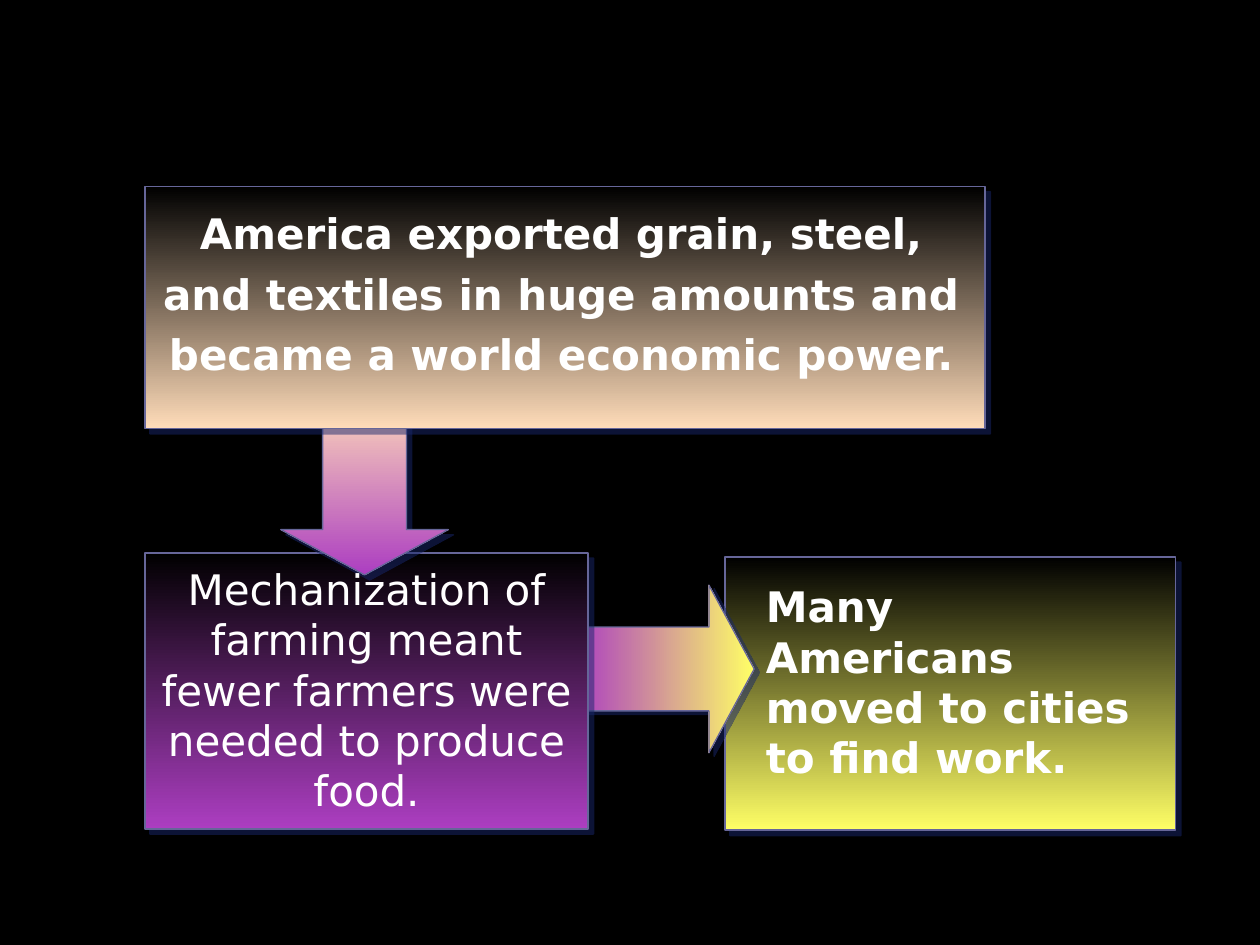
from lxml.etree import SubElement
from pptx import Presentation
from pptx.dml.color import RGBColor as RGB
from pptx.enum.shapes import MSO_SHAPE as Shape
from pptx.enum.text import MSO_AUTO_SIZE as AutoSize, PP_ALIGN as Align
from pptx.oxml.ns import qn
from pptx.util import Cm, Pt

FONT = "DejaVu Sans"
COLORS = {
    "black": "000000", "white": "FFFFFF", "edge": "666699", "shadow": "18276C",
    "peach": "FFDCB9", "purple": "AC3EC1", "yellow": "FFFF66",
}

# Content: frames are left, top, width, height in centimetres
EXPORTS = "America exported grain, steel, and textiles in huge amounts and became a world economic power."
FARMING = "Mechanization of farming meant fewer farmers were needed to produce food."
CITIES = "Many Americans moved to cities to find work."

CITIES_PANEL = ((14.61, 11.23, 9.09, 5.51), "yellow")
FARMING_PANEL = ((2.92, 11.15, 8.94, 5.56), "purple")
EXPORTS_PANEL = ((2.92, 3.76, 16.94, 4.88), "peach")

ARROW_SIZE = (3.38, 3.61)
ARROW_TO_CITIES = ((11.71, 11.68, *ARROW_SIZE), "purple", "yellow")
ARROW_TO_FARMING = ((5.66, 7.98, *ARROW_SIZE), "peach", "purple")


def color(name):
    return RGB.from_string(COLORS[name])


def add_shadow(shape, distance, angle):
    shape.shadow.inherit = False
    effects = shape._element.spPr.find(qn("a:effectLst"))
    outer = SubElement(effects, qn("a:outerShdw"), blurRad="0", dist=str(Pt(distance)),
                       dir=str(angle * 60000), algn="ctr", rotWithShape="0")
    tint = SubElement(outer, qn("a:srgbClr"), val=COLORS["shadow"])
    SubElement(tint, qn("a:alpha"), val="50000")


def add_gradient_shape(page, kind, frame, start, end, line=1, shadow=(4.2, 45)):
    shape = page.shapes.add_shape(kind, *map(Cm, frame))
    shape.fill.gradient()
    shape.fill.gradient_angle = 270  # counter-clockwise: top to bottom
    for stop, name, position in zip(shape.fill.gradient_stops, (start, end), (0, 1)):
        stop.color.rgb = color(name)
        stop.position = position
    shape.line.color.rgb = color("edge")
    shape.line.width = Pt(line)
    add_shadow(shape, *shadow)
    return shape


def add_panel(page, frame, glow):
    return add_gradient_shape(page, Shape.RECTANGLE, frame, "black", glow)


def add_arrow(page, frame, start, end, rotation=0, **style):
    arrow = add_gradient_shape(page, Shape.DOWN_ARROW, frame, start, end, line=0.75, **style)
    arrow.adjustments[0], arrow.adjustments[1] = 0.5, 0.27
    arrow.rotation = rotation


def add_text(page, text, frame, bold=False, align=Align.LEFT, spacing=1.0):
    box = page.shapes.add_textbox(*map(Cm, frame))
    box.text_frame.word_wrap = True
    box.text_frame.auto_size = AutoSize.SHAPE_TO_FIT_TEXT
    para = box.text_frame.paragraphs[0]
    para.alignment = align
    para.line_spacing = spacing
    span = para.add_run()
    span.text = text
    span.font.name = FONT
    span.font.size = Pt(24)
    span.font.bold = bold
    span.font.color.rgb = color("white")


def main():
    deck = Presentation()
    deck.slide_width, deck.slide_height = Cm(25.4), Cm(19.05)
    page = deck.slides.add_slide(deck.slide_layouts[6])
    page.background.fill.solid()
    page.background.fill.fore_color.rgb = color("black")

    # Result: people move to the cities
    add_panel(page, *CITIES_PANEL)
    add_text(page, CITIES, (15.19, 11.58, 7.87, 5.38), bold=True)
    add_arrow(page, *ARROW_TO_CITIES, rotation=270, shadow=(3.6, 34))

    # Causes: exports and mechanized farming
    add_panel(page, *FARMING_PANEL)
    add_arrow(page, *ARROW_TO_FARMING)
    add_panel(page, *EXPORTS_PANEL)
    add_text(page, EXPORTS, (2.92, 3.86, 16.79, 3.96), bold=True, align=Align.CENTER, spacing=1.2)
    add_text(page, FARMING, (2.92, 11.23, 8.94, 5.38), align=Align.CENTER)

    deck.save("out.pptx")


if __name__ == "__main__":
    main()
